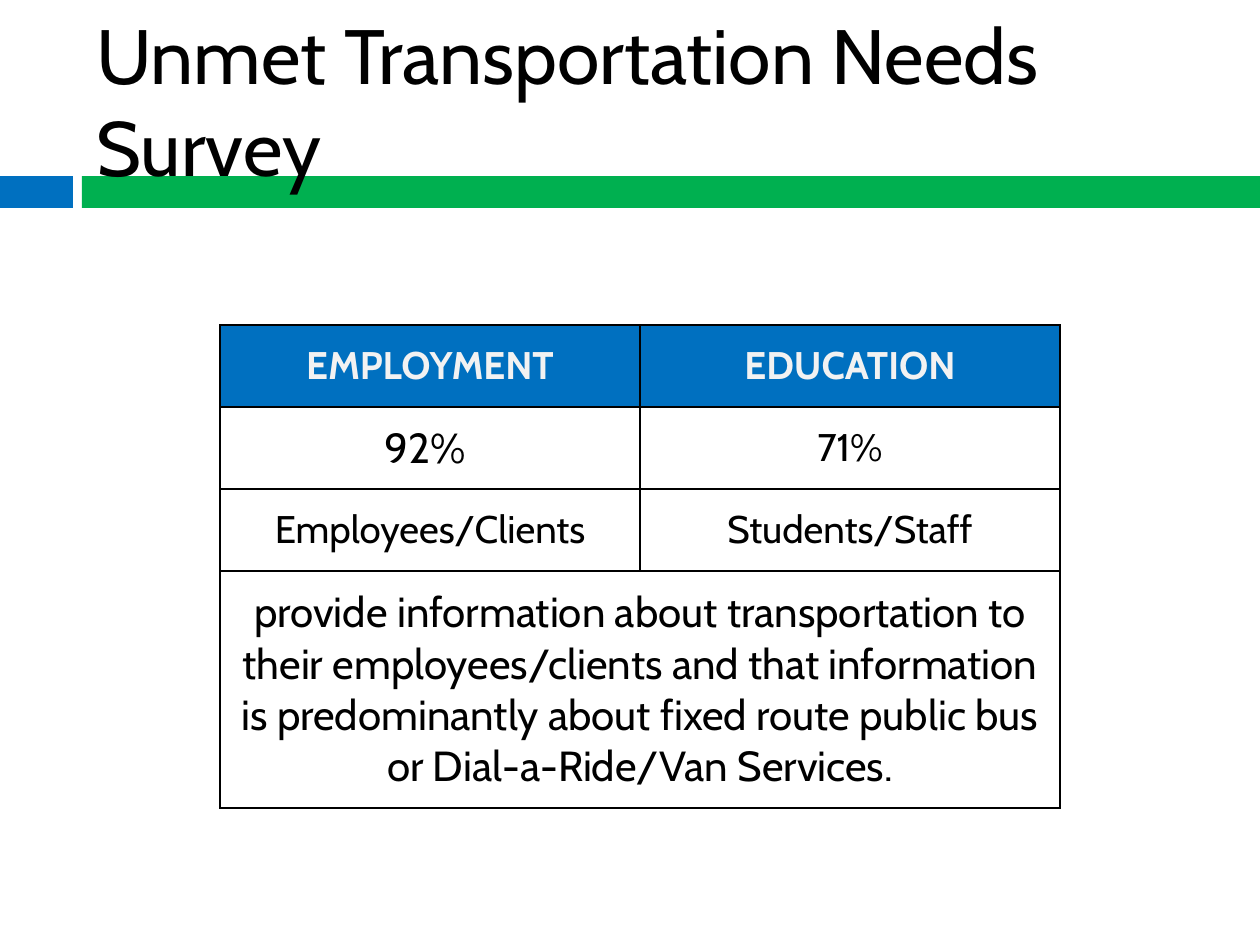
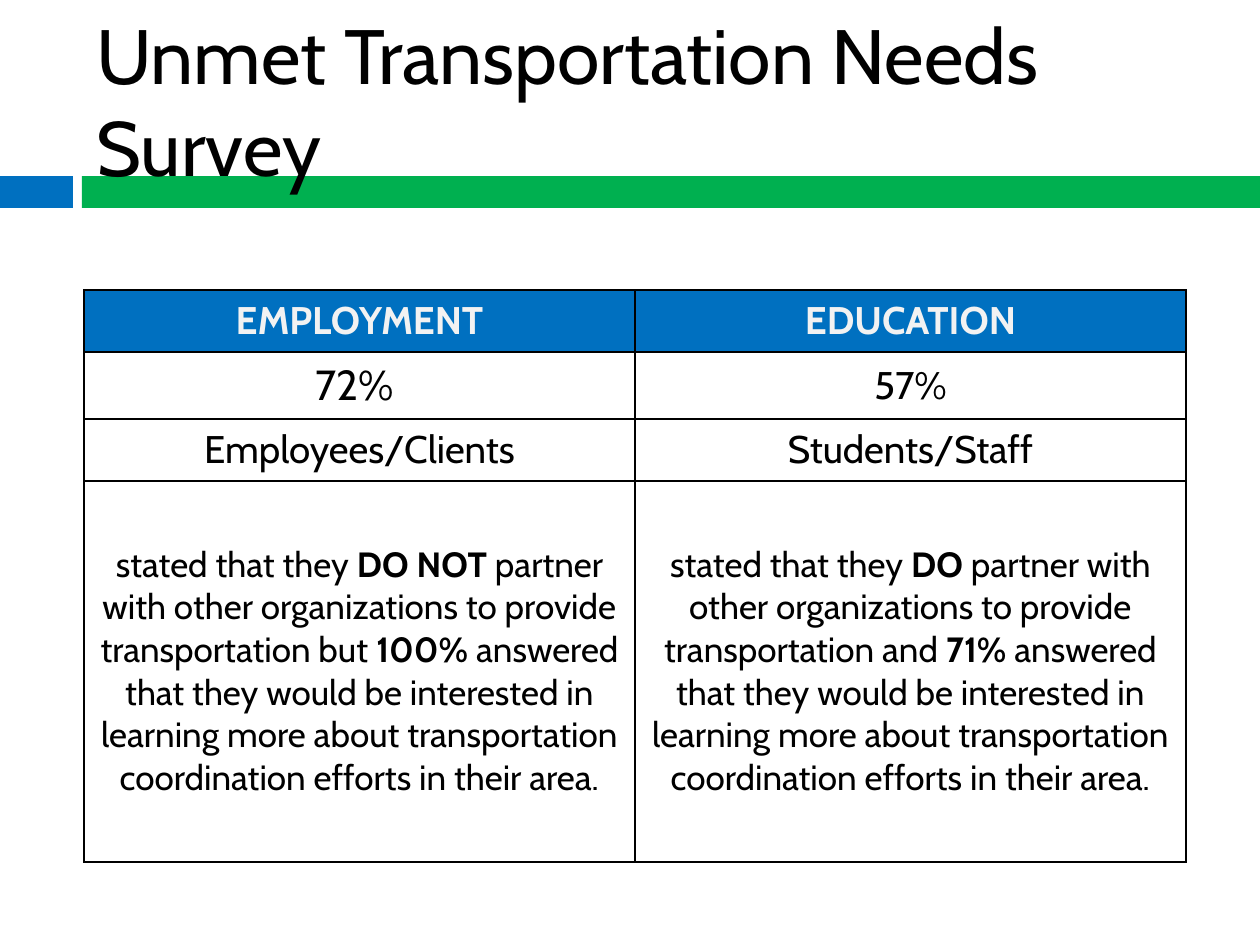
from lxml import etree
from pptx import Presentation
from pptx import util as u
from pptx.dml.color import RGBColor
from pptx.enum import shapes, text
from pptx.oxml.ns import qn

BLUE, GREEN, BLACK, PALE = "0070C0", "00B050", "000000", "F2F2F2"
FONT = "Cabin"
PX = 914400 / 126  # EMU in one px

prs = Presentation()
prs.slide_width, prs.slide_height = u.Inches(10), u.Inches(7.5)


def rgb(hex_colour):
    return RGBColor.from_string(hex_colour)


def write(p, runs, size, colour=BLACK):
    """Add (text, bold) runs to a paragraph."""
    for words, bold in runs:
        r = p.add_run()
        r.text = words
        r.font.color.rgb = rgb(colour)
        for key, value in {"name": FONT, "size": u.Pt(size), "bold": bold}.items():
            setattr(r.font, key, value)


# Shared: bands as (box, colour), title box
BANDS = [((0, 176, 73, 32), BLUE), ((82, 176, 1178, 32), GREEN)]
TITLE = "Unmet Transportation Needs Survey"
TITLE_BOX = (84, 32, 1124, 136)

# Per slide: table position, column width, row heights, percentages, statements
SLIDES = [
    {
        "at": (220, 325), "col": 420, "rows": (82, 82, 82, 237),
        "shares": ("92% ", "71%"), "size": 24,
        "statements": [
            [("provide information about transportation to their employees/clients "
              "and that information is predominantly about fixed route public bus "
              "or Dial-a-Ride/Van Services.", False)],
        ],
    },
    {
        "at": (84, 290), "col": 551, "rows": (62, 67, 62, 381),
        "shares": ("72% ", "57%"), "size": 20,
        "statements": [
            [("stated that they ", False), ("DO NOT ", True),
             ("partner with other organizations to provide transportation but ", False),
             ("100%", True),
             (" answered that they would be interested in learning more about "
              "transportation coordination efforts in their area.", False)],
            [("stated that they ", False), ("DO", True),
             (" partner with other organizations to provide transportation and ", False),
             ("71% ", True),
             ("answered that they would be interested in learning more about "
              "transportation coordination efforts in their area.", False)],
        ],
    },
]

for data in SLIDES:
    s = prs.slides.add_slide(prs.slide_layouts[6])

    # Bands
    for box, colour in BANDS:
        sp = s.shapes.add_shape(shapes.MSO_SHAPE.RECTANGLE, *[round(v * PX) for v in box])
        sp.shadow.inherit = False
        sp.fill.solid()
        sp.fill.fore_color.rgb = rgb(colour)
        sp.line.fill.background()

    # Title
    tf = s.shapes.add_textbox(*[round(v * PX) for v in TITLE_BOX]).text_frame
    tf.word_wrap = True
    tf.vertical_anchor = text.MSO_ANCHOR.MIDDLE
    write(tf.paragraphs[0], [(TITLE, False)], 44)

    # Table grid
    box = (*data["at"], 2 * data["col"], sum(data["rows"]))
    tbl = s.shapes.add_table(4, 2, *[round(v * PX) for v in box]).table
    tbl.horz_banding = False
    for col in tbl.columns:
        col.width = round(data["col"] * PX)
    for row, height in zip(tbl.rows, data["rows"]):
        row.height = round(height * PX)
    if len(data["statements"]) == 1:
        tbl.cell(3, 0).merge(tbl.cell(3, 1))

    # Cell fills and borders
    for i, row in enumerate(tbl.rows):
        for cell in row.cells:
            cell.vertical_anchor = text.MSO_ANCHOR.MIDDLE
            if i == 0:
                cell.fill.solid()
                cell.fill.fore_color.rgb = rgb(BLUE)
            else:
                cell.fill.background()
            tcPr = cell._tc.get_or_add_tcPr()
            for n, side in enumerate(("lnL", "lnR", "lnT", "lnB")):
                ln = etree.Element(qn("a:" + side), w=str(u.Pt(1)))
                fill = etree.SubElement(ln, qn("a:solidFill"))
                etree.SubElement(fill, qn("a:srgbClr"), val=BLACK)
                tcPr.insert(n, ln)

    # Cell text: runs, sizes, colour for each row
    contents = [
        ([[("EMPLOYMENT", True)], [("EDUCATION", True)]], (22, 22), PALE),
        ([[(share, False)] for share in data["shares"]], (24, 22), BLACK),
        ([[("Employees/Clients", False)], [("Students/Staff", False)]], (22, 22), BLACK),
        (data["statements"], (data["size"],) * 2, BLACK),
    ]
    for i, (cells, sizes, colour) in enumerate(contents):
        for j, runs in enumerate(cells):
            p = tbl.cell(i, j).text_frame.paragraphs[0]
            p.alignment = text.PP_ALIGN.CENTER
            write(p, runs, sizes[j], colour)

prs.save("out.pptx")
